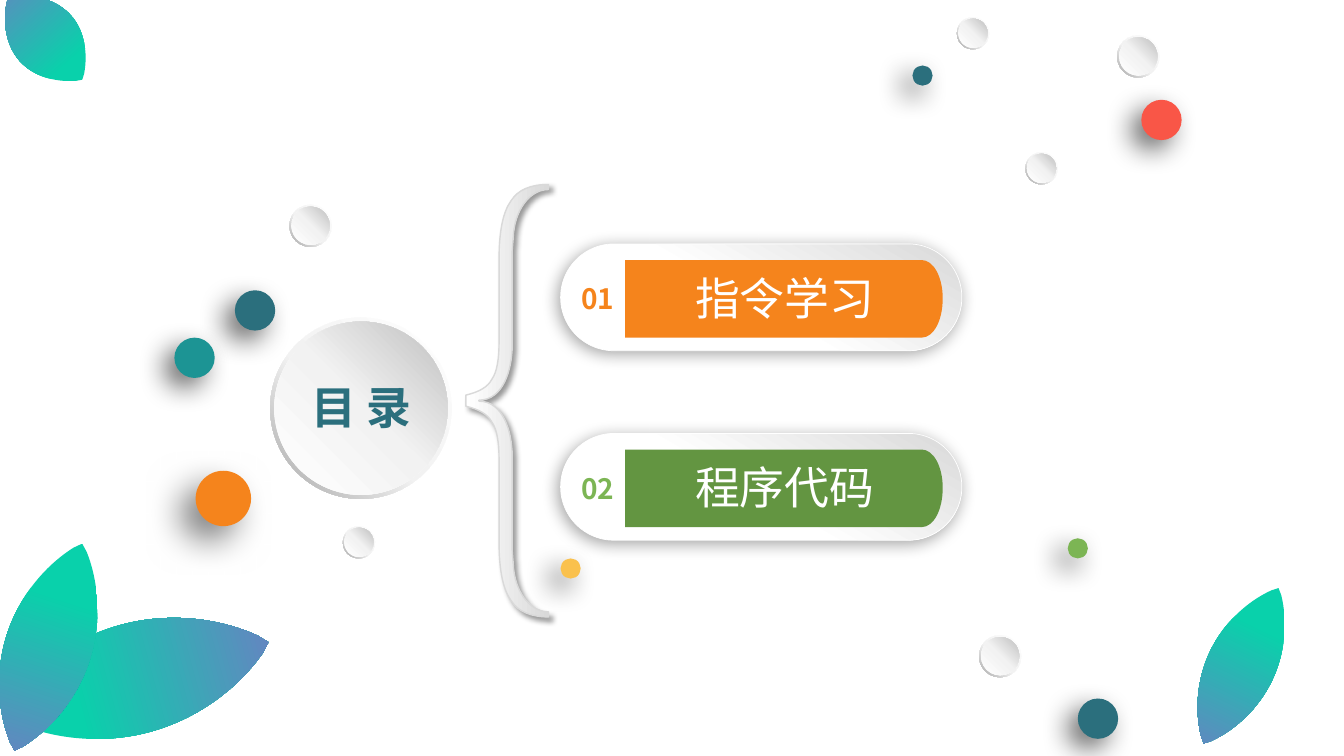
from dataclasses import dataclass
from typing import Callable

import pptx
import pptx.dml.color
import pptx.enum.shapes
import pptx.enum.text
import pptx.oxml
import pptx.oxml.ns
import pptx.util
from pptx.dml.color import RGBColor
from pptx.util import Inches

Point = tuple[float, float]
# A one-point step is a straight line, a three-point step a Bézier curve.
Step = tuple[Point, ...]
Stops = list[tuple[int, RGBColor]]

FONT = "Noto Sans CJK SC"
BLACK = RGBColor(0x00, 0x00, 0x00)
WHITE = RGBColor(0xFF, 0xFF, 0xFF)
PALE = RGBColor(0xF2, 0xF2, 0xF2)
SILVER = RGBColor(0xD9, 0xD9, 0xD9)
GREY = RGBColor(0xBF, 0xBF, 0xBF)
DARK_GREY = RGBColor(0xA6, 0xA6, 0xA6)
PETROL = RGBColor(0x2B, 0x6F, 0x7D)
TEAL = RGBColor(0x1C, 0x94, 0x94)
ORANGE = RGBColor(0xF5, 0x84, 0x1C)
GREEN = RGBColor(0x63, 0x95, 0x41)
LIGHT_GREEN = RGBColor(0x7C, 0xB5, 0x54)
RED = RGBColor(0xF9, 0x56, 0x47)
YELLOW = RGBColor(0xFA, 0xC1, 0x4D)
MINT = RGBColor(0x09, 0xD1, 0xAB)
VIOLET = RGBColor(0x6E, 0x7D, 0xC3)

RIM_STOPS = [(0, WHITE), (55, PALE), (100, DARK_GREY)]
FACE_STOPS = [(0, WHITE), (51, PALE), (100, GREY)]
PILL_STOPS = [(45, WHITE), (100, SILVER)]
BRACE_STOPS = [(0, WHITE), (100, SILVER)]
LEAF_STOPS = [(0, MINT), (31, MINT), (100, VIOLET)]


@dataclass(frozen=True)
class Shadow:
    opacity: int
    blur: float
    distance: float
    angle: int = 135


@dataclass(frozen=True)
class Ball:
    left: float
    top: float
    size: float
    color: RGBColor
    shadow: Shadow = Shadow(60, 20, 10)


@dataclass(frozen=True)
class Button:
    left: float
    top: float
    size: float
    face: float


@dataclass(frozen=True)
class Leaf:
    left: float
    top: float
    width: float
    height: float
    rotation: float


@dataclass(frozen=True)
class Chapter:
    number: str
    name: str
    bar_color: RGBColor
    number_color: RGBColor


CHAPTERS = [
    Chapter("01", "指令学习", ORANGE, ORANGE),
    Chapter("02", "程序代码", GREEN, LIGHT_GREEN),
]
CHAPTER_TOP, CHAPTER_PITCH = 2.42, 1.88
HUB = Button(2.68, 3.15, 1.8, 1.72)
LEAVES = [
    Leaf(0.79, 5.36, 1.1, 2.74, 254.8),
    Leaf(0.05, 5.34, 0.86, 2.16, 18.1),
    Leaf(11.97, 5.75, 0.68, 1.71, 25.7),
    Leaf(0.11, -0.17, 0.68, 1.1, 138.3),
]
BALLS = [
    Ball(11.32, 0.99, 0.4, RED),
    Ball(9.05, 0.65, 0.2, PETROL),
    Ball(2.33, 2.88, 0.4, PETROL),
    Ball(5.56, 5.54, 0.2, YELLOW),
    Ball(1.94, 4.67, 0.55, ORANGE, Shadow(50, 25, 15)),
    Ball(10.69, 6.93, 0.4, PETROL),
    Ball(1.73, 3.35, 0.4, TEAL),
    Ball(10.59, 5.34, 0.2, LIGHT_GREEN),
]
BUTTONS = [
    Button(9.49, 0.17, 0.32, 0.29),
    Button(11.08, 0.35, 0.42, 0.38),
    Button(3.4, 5.22, 0.32, 0.29),
    Button(10.17, 1.51, 0.32, 0.29),
    Button(9.71, 6.3, 0.42, 0.38),
    Button(2.87, 2.03, 0.42, 0.38),
]

# Upper half of the brace; the lower half mirrors it.
BRACE_START, BRACE_HEIGHT_SUM = (4.62, 3.92), 7.95
BRACE_HALF: list[Step] = [
    ((4.75, 3.89), (4.84, 3.84), (4.88, 3.76)),
    ((4.93, 3.69), (4.95, 3.56), (4.95, 3.38)),
    ((4.95, 2.57),),
    ((4.95, 2.29), (4.99, 2.1), (5.07, 1.99)),
    ((5.14, 1.88), (5.27, 1.83), (5.44, 1.83)),
    ((5.44, 1.88),),
    ((5.25, 1.88), (5.1, 2.09), (5.09, 2.36)),
    ((5.08, 2.49),),
    ((5.08, 3.42),),
    ((5.08, 3.67), (4.99, 3.97), (4.75, 3.97)),
]
# Upper left quarter of a leaf in a unit square.
LEAF_TIP = (0.5, 0)
LEAF_QUARTER: list[Step] = [((0.42, 0.03),), ((0.17, 0.15), (0, 0.32), (0, 0.5))]
BAR: list[Step] = [
    ((2.94, 0),),
    ((3.06, 0), (3.15, 0.17), (3.15, 0.38)),
    ((3.15, 0.6), (3.06, 0.77), (2.94, 0.77)),
    ((0, 0.77),),
]


def retrace(start: Point, steps: list[Step], flip: Callable[[Point], Point]) -> list[Step]:
    """Walk the mirrored steps back from their end to their start."""
    starts = [start] + [step[-1] for step in steps[:-1]]
    return [tuple(flip(point) for point in (*step[-2::-1], origin))
            for origin, step in reversed(list(zip(starts, steps)))]


def add_outline(slide, start: Point, steps: list[Step], place: Callable[[Point], Point]):
    """Draw a closed outline, joining each three-point step into one curve."""
    first, *rest = [tuple(map(Inches, place(point)))
                    for point in (start, *(p for step in steps for p in step))]
    builder = slide.shapes.build_freeform(*first)
    builder.add_line_segments(rest, close=True)
    outline = builder.convert_to_shape()
    qn = pptx.oxml.ns.qn
    lines = iter(outline._element.spPr.findall(".//" + qn("a:lnTo")))
    for step in steps:
        segment = [next(lines) for _ in step]
        if len(step) == 3:
            curve = segment[0].makeelement(qn("a:cubicBezTo"))
            segment[0].addprevious(curve)
            for line in segment:
                curve.append(line[0])
                line.getparent().remove(line)
    return outline


def add_preset(slide, kind, left: float, top: float, width: float, height: float):
    return slide.shapes.add_shape(kind, *map(Inches, (left, top, width, height)))


def add_color_xml(parent, tag: str, child: str, color: RGBColor, **attributes) -> None:
    values = " ".join(f'{key}="{value}"' for key, value in attributes.items())
    parent.append(pptx.oxml.parse_xml(
        f'<a:{tag} {pptx.oxml.ns.nsdecls("a")} {values}>'
        f'<a:srgbClr val="{color}">{child}</a:srgbClr></a:{tag}>'))


def paint(shape, fill: RGBColor | Stops, angle: int = 0, line: RGBColor | None = None,
          line_width: float = 1, shadow: Shadow | None = None) -> None:
    """Set fill, line and shadow; gradient angles run clockwise."""
    properties, qn, pt = shape._element.spPr, pptx.oxml.ns.qn, pptx.util.Pt
    if isinstance(fill, list):
        shape.fill.gradient()
        shape.fill.gradient_angle = -angle % 360
        stop_list = properties.find(".//" + qn("a:gsLst"))
        stop_list.clear()
        for position, color in fill:
            add_color_xml(stop_list, "gs", "", color, pos=position * 1000)
    else:
        shape.fill.solid()
        shape.fill.fore_color.rgb = fill
    if line is None:
        shape.line.fill.background()
    else:
        shape.line.color.rgb = line
        shape.line.width = pt(line_width)
    shape.shadow.inherit = False
    if shadow:
        add_color_xml(properties.find(qn("a:effectLst")), "outerShdw",
                      f'<a:alpha val="{shadow.opacity * 1000}"/>', BLACK,
                      blurRad=pt(shadow.blur), dist=pt(shadow.distance),
                      dir=shadow.angle * 60000, rotWithShape=0)


def write(shape, text: str, size: int, color: RGBColor, bold: bool, wrap: bool = True) -> None:
    frame = shape.text_frame
    frame_format = {"word_wrap": wrap, "auto_size": pptx.enum.text.MSO_AUTO_SIZE.NONE,
                    "vertical_anchor": pptx.enum.text.MSO_ANCHOR.MIDDLE}
    for key, value in frame_format.items():
        setattr(frame, key, value)
    paragraph = frame.paragraphs[0]
    paragraph.alignment = pptx.enum.text.PP_ALIGN.CENTER
    run = paragraph.add_run()
    run.text = text
    for key, value in {"name": FONT, "size": pptx.util.Pt(size), "bold": bold}.items():
        setattr(run.font, key, value)
    run.font.color.rgb = color
    east_asian = pptx.oxml.parse_xml(f'<a:ea {pptx.oxml.ns.nsdecls("a")} typeface="{FONT}"/>')
    run._r.rPr.find(pptx.oxml.ns.qn("a:latin")).addnext(east_asian)


def add_button(slide, button: Button) -> None:
    kinds = pptx.enum.shapes.MSO_SHAPE
    rim = add_preset(slide, kinds.DONUT, button.left, button.top, button.size, button.size)
    rim.adjustments[0] = 0.049
    paint(rim, RIM_STOPS, 135)
    inset = (button.size - button.face) / 2
    face = add_preset(slide, kinds.OVAL, button.left + inset, button.top + inset,
                      button.face, button.face)
    paint(face, FACE_STOPS, 315)


def add_title(slide) -> None:
    title = slide.shapes.title
    place = {"left": 2.8, "top": 3.76, "width": 1.57, "height": 0.54}
    for key, value in place.items():
        setattr(title, key, Inches(value))
    for side in ("left", "top", "right", "bottom"):
        setattr(title.text_frame, f"margin_{side}", 0)
    write(title, "目 录", 32, PETROL, True)
    slide.shapes._spTree.append(title._element)


def add_brace(slide) -> None:
    def flip(point: Point) -> Point:
        return point[0], BRACE_HEIGHT_SUM - point[1]

    notch = (flip(BRACE_HALF[-1][-1]),)
    steps = BRACE_HALF + [notch] + retrace(BRACE_START, BRACE_HALF, flip)
    brace = add_outline(slide, BRACE_START, steps, lambda point: point)
    paint(brace, BRACE_STOPS, 0, SILVER, 1, Shadow(40, 4, 3, 45))


def add_chapter(slide, chapter: Chapter, top: float) -> None:
    pill = add_preset(slide, pptx.enum.shapes.MSO_SHAPE.ROUNDED_RECTANGLE, 5.56, top, 3.98, 1.06)
    pill.adjustments[0] = 0.5
    paint(pill, PILL_STOPS, 300, WHITE, 0.5, Shadow(34, 12, 3))
    bar = add_outline(slide, (0, 0), BAR, lambda point: (6.2 + point[0], top + 0.16 + point[1]))
    paint(bar, chapter.bar_color)
    number = slide.shapes.add_textbox(*map(Inches, (5.66, top + 0.32, 0.54, 0.44)))
    write(number, chapter.number, 20, chapter.number_color, True, wrap=False)
    name = slide.shapes.add_textbox(*map(Inches, (6.68, top + 0.21, 2.21, 0.64)))
    write(name, chapter.name, 32, WHITE, False)


def add_leaf(slide, leaf: Leaf) -> None:
    half = LEAF_QUARTER + retrace(LEAF_TIP, LEAF_QUARTER, lambda p: (p[0], 1 - p[1]))
    steps = half + retrace(LEAF_TIP, half, lambda p: (1 - p[0], p[1]))
    blade = add_outline(slide, LEAF_TIP, steps, lambda p: (leaf.left + p[0] * leaf.width,
                                                           leaf.top + p[1] * leaf.height))
    blade.rotation = leaf.rotation
    paint(blade, LEAF_STOPS, 90)


def main() -> None:
    deck = pptx.Presentation()
    deck.slide_width, deck.slide_height = Inches(13.33), Inches(7.5)
    slide = deck.slides.add_slide(deck.slide_layouts.get_by_name("Title Only"))
    add_button(slide, HUB)
    add_title(slide)
    add_brace(slide)
    for row, chapter in enumerate(CHAPTERS):
        add_chapter(slide, chapter, CHAPTER_TOP + row * CHAPTER_PITCH)
    for leaf in LEAVES:
        add_leaf(slide, leaf)
    for ball in BALLS:
        dot = add_preset(slide, pptx.enum.shapes.MSO_SHAPE.OVAL,
                         ball.left, ball.top, ball.size, ball.size)
        paint(dot, ball.color, shadow=ball.shadow)
    for button in BUTTONS:
        add_button(slide, button)
    deck.save("out.pptx")


if __name__ == "__main__":
    main()
